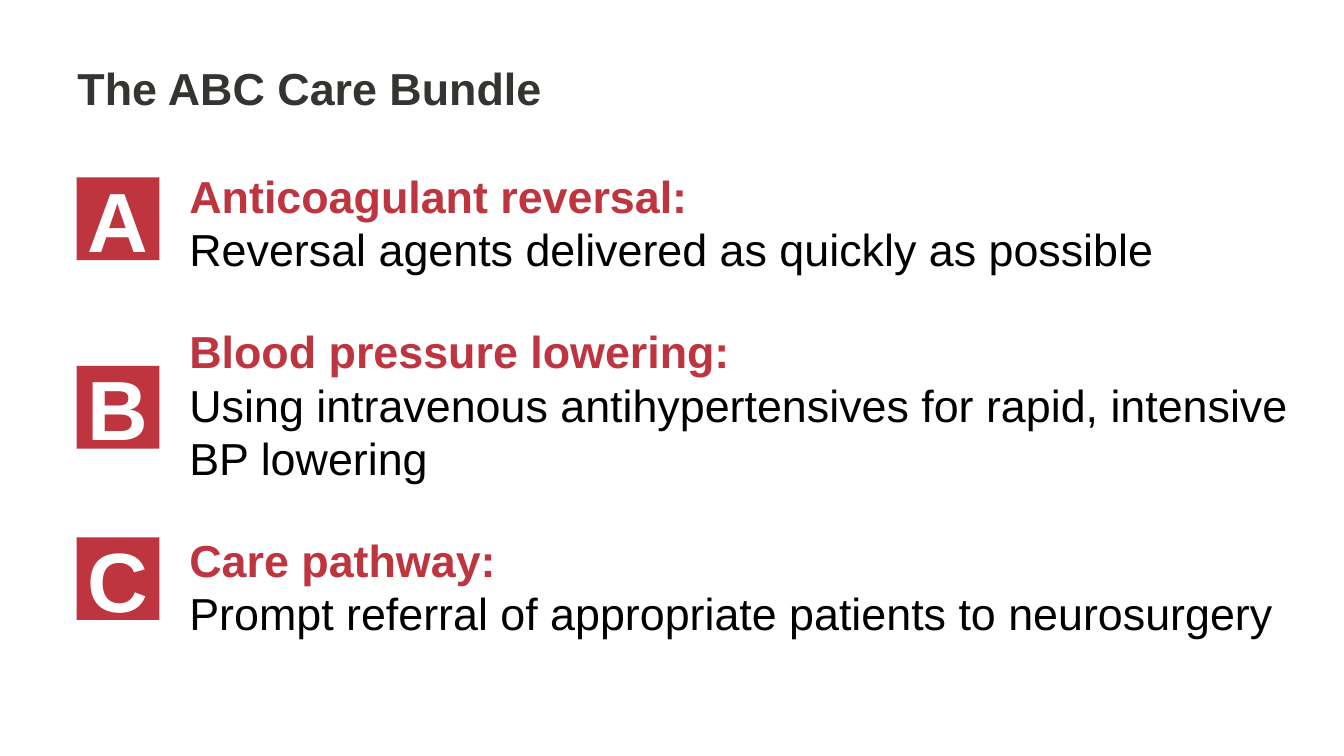
import dataclasses
import pptx
import pptx.dml.color
import pptx.enum.shapes
import pptx.enum.text
import pptx.util

Inches = pptx.util.Inches
Pt = pptx.util.Pt
Color = pptx.dml.color.RGBColor
Anchor = pptx.enum.text.MSO_ANCHOR


@dataclasses.dataclass(frozen=True)
class Theme:
    font: str = "Arial"
    red: str = "BE3540"
    dark: str = "343431"
    black: str = "000000"
    white: str = "FFFFFF"
    body: int = 32
    badge: int = 60


@dataclasses.dataclass(frozen=True)
class Step:
    letter: str
    top: float
    head: str
    text: str


THEME = Theme()
STEPS = [
    Step("A", 1.76, "Anticoagulant reversal:", "Reversal agents delivered as quickly as possible"),
    Step("B", 3.63, "Blood pressure lowering:",
         "Using intravenous antihypertensives for rapid, intensive BP lowering"),
    Step("C", 5.33, "Care pathway:", "Prompt referral of appropriate patients to neurosurgery"),
]


def style(run: pptx.text.text._Run, size: int, color: str, bold: bool = True) -> None:
    font = run.font
    font.name = THEME.font
    font.size = Pt(size)
    font.bold = bold
    font.color.rgb = Color.from_string(color)


def add_box(slide: pptx.slide.Slide, left: float, top: float, width: float,
            height: float) -> pptx.text.text.TextFrame:
    box = slide.shapes.add_textbox(Inches(left), Inches(top), Inches(width), Inches(height))
    box.text_frame.word_wrap = True
    return box.text_frame


def add_title(slide: pptx.slide.Slide) -> None:
    frame = add_box(slide, 0.67, 0.22, 11.75, 1.3)
    frame.vertical_anchor = Anchor.MIDDLE
    frame.text = "The ABC Care Bundle"
    style(frame.paragraphs[0].runs[0], THEME.body, THEME.dark)


def add_steps(slide: pptx.slide.Slide, steps: list[Step]) -> None:
    frame = add_box(slide, 1.78, 1.62, 11.18, 5.52)
    frame.text = "\n".join(f"{step.head}\v{step.text}" for step in steps)
    for place, para in enumerate(frame.paragraphs):
        para.line_spacing = 1.0
        para.space_before = Pt(10 if place else 0)
        para.space_after = Pt(24)
        head, text = para.runs
        style(head, THEME.body, THEME.red)
        style(text, THEME.body, THEME.black, False)


def add_badge(slide: pptx.slide.Slide, step: Step) -> None:
    side = Inches(0.82)
    kind = pptx.enum.shapes.MSO_SHAPE.RECTANGLE
    badge = slide.shapes.add_shape(kind, Inches(0.76), Inches(step.top), side, side)
    badge.shadow.inherit = False
    badge.fill.solid()
    badge.fill.fore_color.rgb = Color.from_string(THEME.red)
    badge.line.fill.background()
    frame = badge.text_frame
    frame.margin_left = frame.margin_right = 0
    frame.margin_top = frame.margin_bottom = 0
    frame.vertical_anchor = Anchor.MIDDLE
    frame.text = step.letter
    para = frame.paragraphs[0]
    para.alignment = pptx.enum.text.PP_ALIGN.CENTER
    style(para.runs[0], THEME.badge, THEME.white)


def main() -> None:
    """Build the care bundle slide."""
    deck = pptx.Presentation()
    deck.slide_width = Inches(13.33)
    deck.slide_height = Inches(7.5)
    slide = deck.slides.add_slide(deck.slide_layouts[6])
    add_title(slide)
    add_steps(slide, STEPS)
    for step in STEPS:
        add_badge(slide, step)
    deck.save("out.pptx")


if __name__ == "__main__":
    main()
